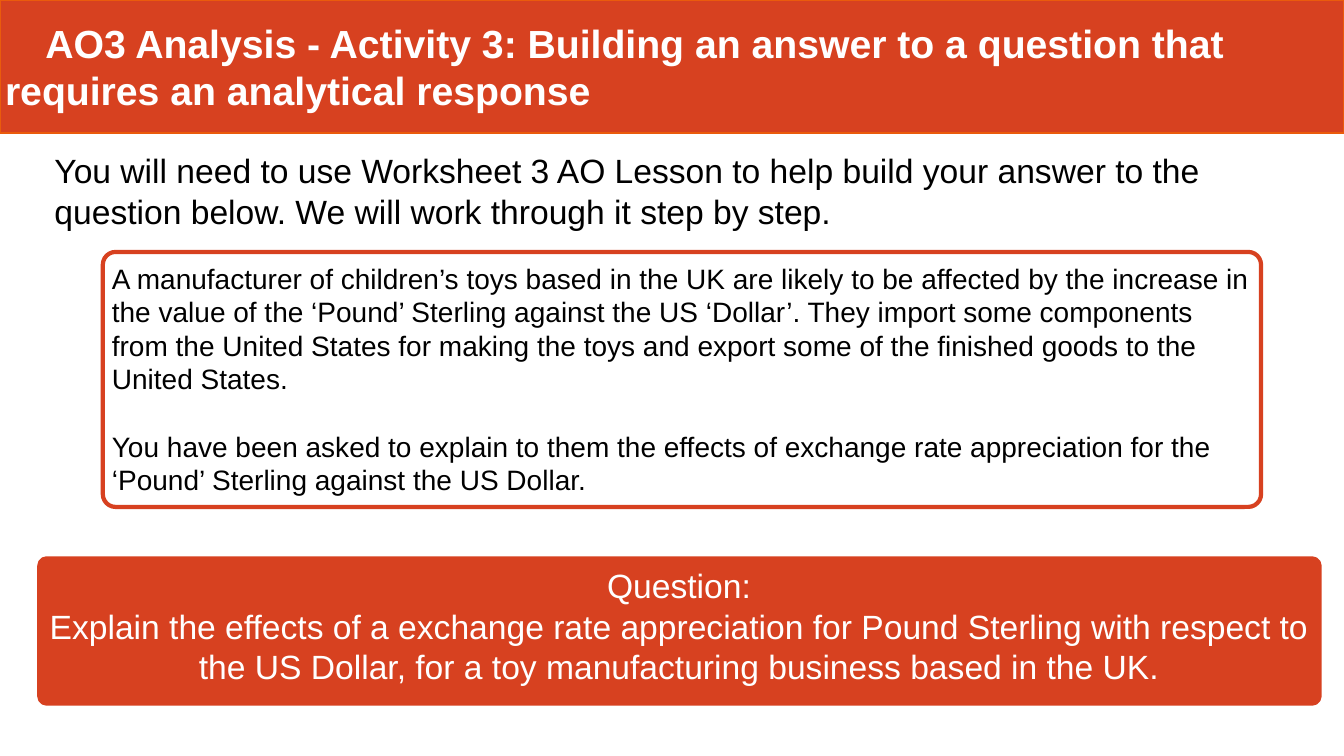
from pptx import Presentation
from pptx.dml.color import RGBColor
from pptx.enum.shapes import MSO_SHAPE
from pptx.enum.text import MSO_ANCHOR, PP_ALIGN
from pptx.util import Inches, Pt

RECT, ROUNDED = MSO_SHAPE.RECTANGLE, MSO_SHAPE.ROUNDED_RECTANGLE
TOP, MIDDLE = MSO_ANCHOR.TOP, MSO_ANCHOR.MIDDLE
LEFT, CENTER = PP_ALIGN.LEFT, PP_ALIGN.CENTER

THEME = {
    "font": "Arial",
    "red": RGBColor(0xD7, 0x41, 0x20),
    "orange": RGBColor(0xEA, 0x5B, 0x0C),
    "white": RGBColor(0xFF, 0xFF, 0xFF),
    "black": RGBColor(0, 0, 0),
    "title": Pt(28),
    "body": Pt(24),
    "scenario": Pt(20),
}

deck = Presentation()
deck.slide_width, deck.slide_height = Inches(13.33), Inches(7.5)
slide = deck.slides.add_slide(deck.slide_layouts[6])

# Grid of 100 columns by 100 rows
COL, ROW = deck.slide_width / 100, deck.slide_height / 100


def add_panel(kind, col, row, cols, rows, fill, line, width):
    panel = slide.shapes.add_shape(
        kind, int(col * COL), int(row * ROW), int(cols * COL), int(rows * ROW))
    panel.shadow.inherit = False
    if kind == ROUNDED:
        panel.adjustments[0] = 0.05
    if fill:
        panel.fill.solid()
        panel.fill.fore_color.rgb = THEME[fill]
    else:
        panel.fill.background()
    panel.line.color.rgb = THEME[line]
    panel.line.width = Pt(width)


def add_text(col, row, cols, rows, paragraphs, size, color,
             align=LEFT, anchor=TOP, bold=False, gap=0):
    frame = slide.shapes.add_textbox(
        int(col * COL), int(row * ROW), int(cols * COL), int(rows * ROW)).text_frame
    frame.word_wrap = True
    frame.vertical_anchor = anchor
    frame.margin_left = frame.margin_right = Inches(0.05)
    frame.margin_top = frame.margin_bottom = Inches(0.05)
    for i, wording in enumerate(paragraphs):
        paragraph = frame.add_paragraph() if i else frame.paragraphs[0]
        paragraph.alignment = align
        if i:
            paragraph.space_before = Pt(gap)
        run = paragraph.add_run()
        run.text = wording
        run.font.name = THEME["font"]
        run.font.size = THEME[size]
        run.font.color.rgb = THEME[color]
        run.font.bold = bold
    return frame


# Title band, first line indented
add_panel(RECT, 0, 0, 100, 17.6, "red", "orange", 1)
title = add_text(0, 2.27, 100, 13.07, [
    "AO3 Analysis - Activity 3: Building an answer to a question that "
    "requires an analytical response",
], "title", "white", anchor=MIDDLE, bold=True)
title.paragraphs[0]._p.get_or_add_pPr().set("indent", str(Inches(0.4)))

# Introduction
intro = add_text(3.68, 19.2, 94.5, 12.13, [
    "You will need to use Worksheet 3 AO Lesson to help build your answer to the "
    "question below. We will work through it step by step.",
], "body", "black")
intro.paragraphs[0].space_before = Pt(12)

# Scenario
add_panel(ROUNDED, 7.65, 33.33, 86.18, 33.73, None, "red", 3)
add_text(7.95, 33.87, 85.58, 31.07, [
    "A manufacturer of children’s toys based in the UK are likely to be affected by "
    "the increase in the value of the ‘Pound’ Sterling against the US ‘Dollar’. They "
    "import some components from the United States for making the toys and export "
    "some of the finished goods to the United States.",
    "You have been asked to explain to them the effects of exchange rate "
    "appreciation for the ‘Pound’ Sterling against the US Dollar.",
], "scenario", "black", gap=24)

# Question
add_panel(ROUNDED, 2.93, 73.87, 95.25, 19.2, "red", "red", 3)
add_text(3.08, 74.13, 94.88, 21.87, [
    "Question:",
    "Explain the effects of a exchange rate appreciation for Pound Sterling with "
    "respect to the US Dollar, for a toy manufacturing business based in the UK.",
], "body", "white", align=CENTER)

deck.save("out.pptx")
